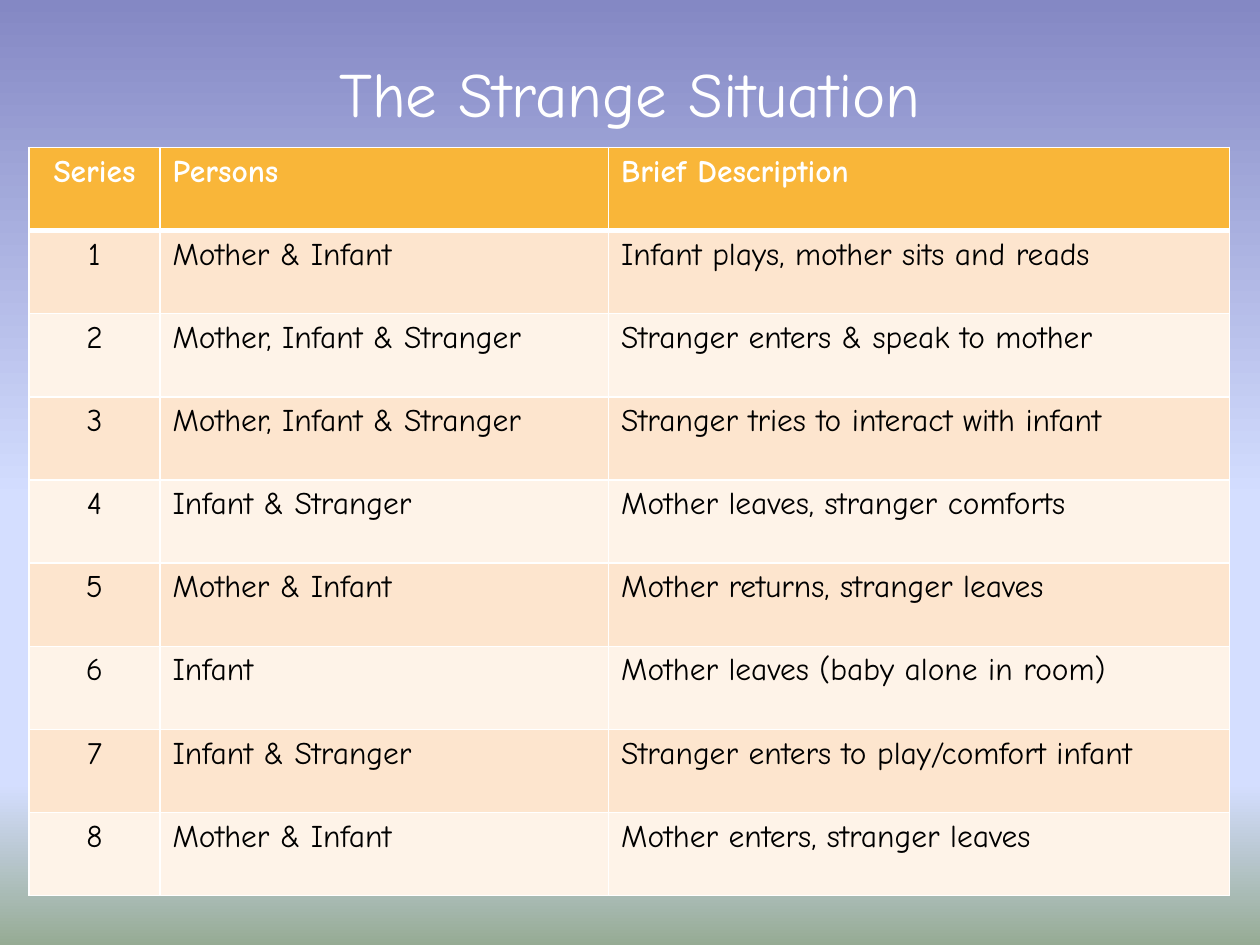
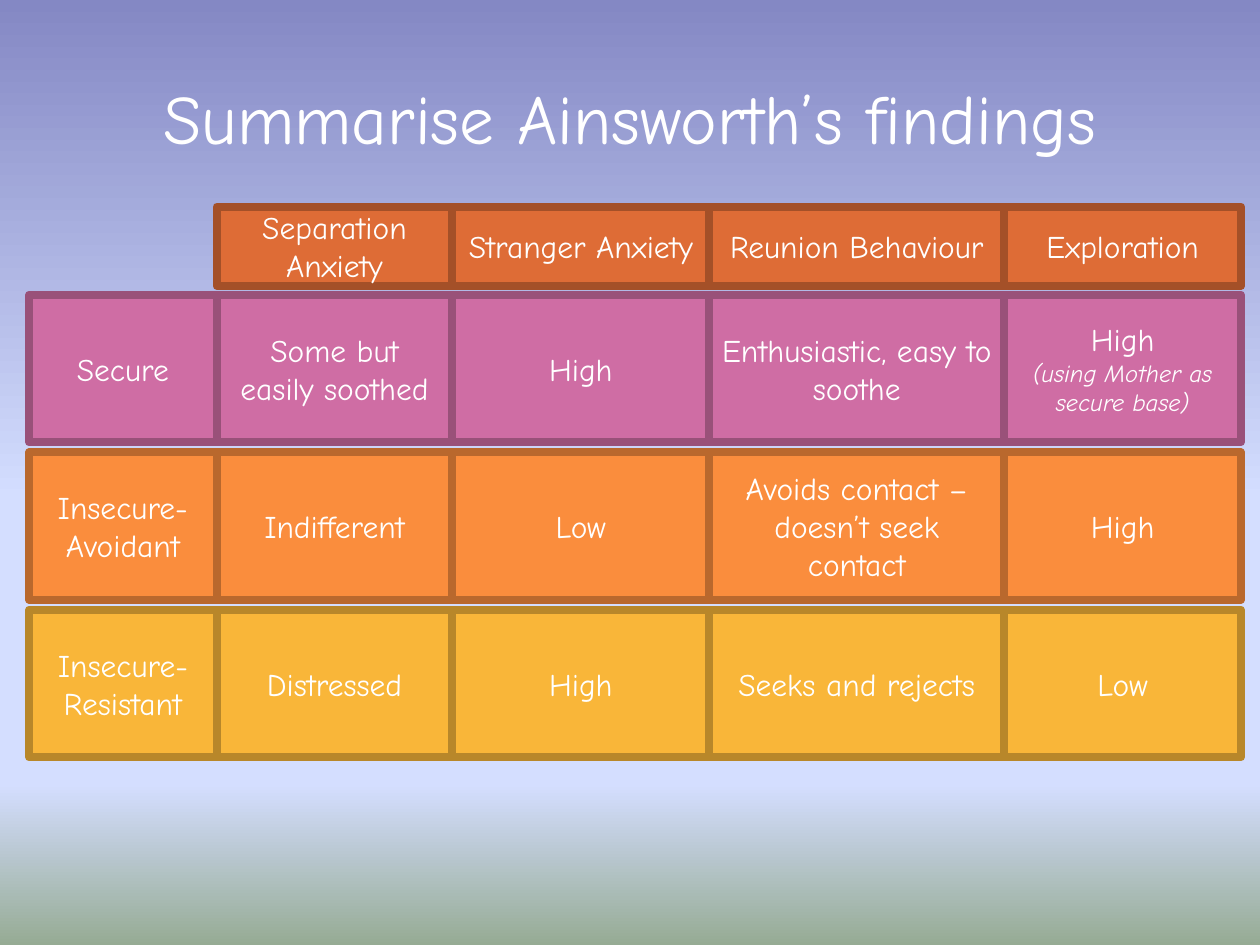
from itertools import accumulate

from pptx import Presentation
from pptx.dml.color import RGBColor
from pptx.enum.shapes import MSO_SHAPE
from pptx.enum.text import MSO_ANCHOR, PP_ALIGN
from pptx.oxml import parse_xml
from pptx.oxml.ns import nsdecls
from pptx.util import Inches, Pt

RECT = MSO_SHAPE.RECTANGLE
LEFT, CENTER = PP_ALIGN.LEFT, PP_ALIGN.CENTER
TOP, MIDDLE = MSO_ANCHOR.TOP, MSO_ANCHOR.MIDDLE

# Shared look
FONT = "Comic Neue"
WHITE = RGBColor(0xFF, 0xFF, 0xFF)
BLACK = RGBColor(0x00, 0x00, 0x00)
GOLD = RGBColor(0xF9, 0xB6, 0x39)
GOLD_EDGE = RGBColor(0xB8, 0x87, 0x2A)
RUST = RGBColor(0xDE, 0x6C, 0x36)
RUST_EDGE = RGBColor(0xA4, 0x50, 0x28)
PINK = RGBColor(0xCF, 0x6D, 0xA4)
PINK_EDGE = RGBColor(0x99, 0x51, 0x79)
ORANGE = RGBColor(0xFA, 0x8D, 0x3D)
ORANGE_EDGE = RGBColor(0xB9, 0x68, 0x2D)
BAND_DARK = RGBColor(0xFD, 0xE5, 0xCE)
BAND_LIGHT = RGBColor(0xFE, 0xF3, 0xE8)
SKY = [(0, RGBColor(0x84, 0x88, 0xC4)), (53, RGBColor(0xD4, 0xDE, 0xFF)),
       (83, RGBColor(0xD4, 0xDE, 0xFF)), (100, RGBColor(0x96, 0xAB, 0x94))]

# Slide 1 content
EPISODE_HEADERS = ("Series", "Persons", "Brief Description")
EPISODES = [
    ("Mother & Infant", "Infant plays, mother sits and reads"),
    ("Mother, Infant & Stranger", "Stranger enters & speak to mother"),
    ("Mother, Infant & Stranger", "Stranger tries to interact with infant"),
    ("Infant & Stranger", "Mother leaves, stranger comforts"),
    ("Mother & Infant", "Mother returns, stranger leaves"),
    ("Infant", "Mother leaves (baby alone in room)"),
    ("Infant & Stranger", "Stranger enters to play/comfort infant"),
    ("Mother & Infant", "Mother enters, stranger leaves"),
]
EPISODE_COLS = (1.04, 3.56, 4.93)
EPISODE_ROW = 0.66

# Slide 2 content: top, height, fill, edge, texts (None leaves the place empty)
FINDINGS = [
    (1.64, 0.63, RUST, RUST_EDGE,
     (None, "Separation Anxiety", "Stranger Anxiety", "Reunion Behaviour", "Exploration")),
    (2.34, 1.17, PINK, PINK_EDGE,
     ("Secure", "Some but easily soothed", "High", "Enthusiastic, easy to soothe",
      "High\n(using Mother as secure base)")),
    (3.59, 1.17, ORANGE, ORANGE_EDGE,
     ("Insecure-Avoidant", "Indifferent", "Low",
      "Avoids contact – doesn’t seek contact", "High")),
    (4.84, 1.17, GOLD, GOLD_EDGE,
     ("Insecure-\nResistant", "Distressed", "High", "Seeks and rejects", "Low")),
]
FINDING_COLS = (1.49, 1.87, 2.04, 2.34, 1.88)
TABLE_LEFT = 0.23


def write(tf, text, size=18, color=WHITE, align=CENTER, bold=False):
    """Fill a text frame, one paragraph a line; bracketed lines are small italic notes."""
    tf.word_wrap = True
    for i, line in enumerate(text.split("\n")):
        note = line.startswith("(")
        p = tf.add_paragraph() if i else tf.paragraphs[0]
        p.alignment = align
        r = p.add_run()
        r.text = line
        r.font.name, r.font.size = FONT, Pt(14 if note else size)
        r.font.bold, r.font.italic = bold, note
        r.font.color.rgb = color


def new_slide(prs, title, height, size):
    s = prs.slides.add_slide(prs.slide_layouts[6])
    stops = "".join(f'<a:gs pos="{pos * 1000}"><a:srgbClr val="{color}"/></a:gs>'
                    for pos, color in SKY)
    s.element.cSld.insert(0, parse_xml(
        f'<p:bg {nsdecls("p", "a")}><p:bgPr><a:gradFill><a:gsLst>{stops}</a:gsLst>'
        '<a:lin ang="5400000" scaled="0"/></a:gradFill><a:effectLst/></p:bgPr></p:bg>'))
    tf = s.shapes.add_textbox(Inches(0.5), Inches(0.3), Inches(9), Inches(height)).text_frame
    tf.vertical_anchor = MIDDLE
    write(tf, title, size=size)
    return s


def set_borders(cell, **widths):
    tc_pr = cell._tc.get_or_add_tcPr()
    for side in ("L", "R", "T", "B"):
        tc_pr.append(parse_xml(
            f'<a:ln{side} {nsdecls("a")} w="{Pt(widths.get(side, 1))}"><a:solidFill>'
            f'<a:srgbClr val="{WHITE}"/></a:solidFill></a:ln{side}>'))


def episode_slide(prs):
    s = new_slide(prs, "The Strange Situation", height=0.87, size=36)
    rows = [EPISODE_HEADERS] + [(str(n), *row) for n, row in enumerate(EPISODES, 1)]
    table = s.shapes.add_table(
        len(rows), len(EPISODE_COLS), Inches(TABLE_LEFT), Inches(1.17),
        Inches(sum(EPISODE_COLS)), Inches(EPISODE_ROW * len(rows))).table
    for column, width in zip(table.columns, EPISODE_COLS):
        column.width = Inches(width)
    for r, row in enumerate(rows):
        table.rows[r].height = Inches(EPISODE_ROW)
        header = r == 0
        for c, text in enumerate(row):
            cell = table.cell(r, c)
            set_borders(cell, B=3 if header else 1, T=3 if r == 1 else 1)
            cell.fill.solid()
            cell.fill.fore_color.rgb = GOLD if header else BAND_DARK if r % 2 else BAND_LIGHT
            cell.vertical_anchor = TOP
            write(cell.text_frame, text, color=WHITE if header else BLACK,
                  align=LEFT if c else CENTER, bold=header)


def findings_slide(prs):
    s = new_slide(prs, "Summarise Ainsworth’s findings", height=1.25, size=39.6)
    lefts = list(accumulate(FINDING_COLS, initial=TABLE_LEFT))
    for top, height, fill, edge, texts in FINDINGS:
        for left, width, text in zip(lefts, FINDING_COLS, texts):
            if text is None:
                continue
            sp = s.shapes.add_shape(RECT, Inches(left), Inches(top),
                                    Inches(width), Inches(height))
            sp.shadow.inherit = False
            sp.fill.solid()
            sp.fill.fore_color.rgb = fill
            sp.line.color.rgb = edge
            sp.line.width = Pt(4.5)
            sp.text_frame.vertical_anchor = MIDDLE
            write(sp.text_frame, text)


def main():
    prs = Presentation()
    prs.slide_width, prs.slide_height = Inches(10), Inches(7.5)
    episode_slide(prs)
    findings_slide(prs)
    prs.save("out.pptx")


if __name__ == "__main__":
    main()
